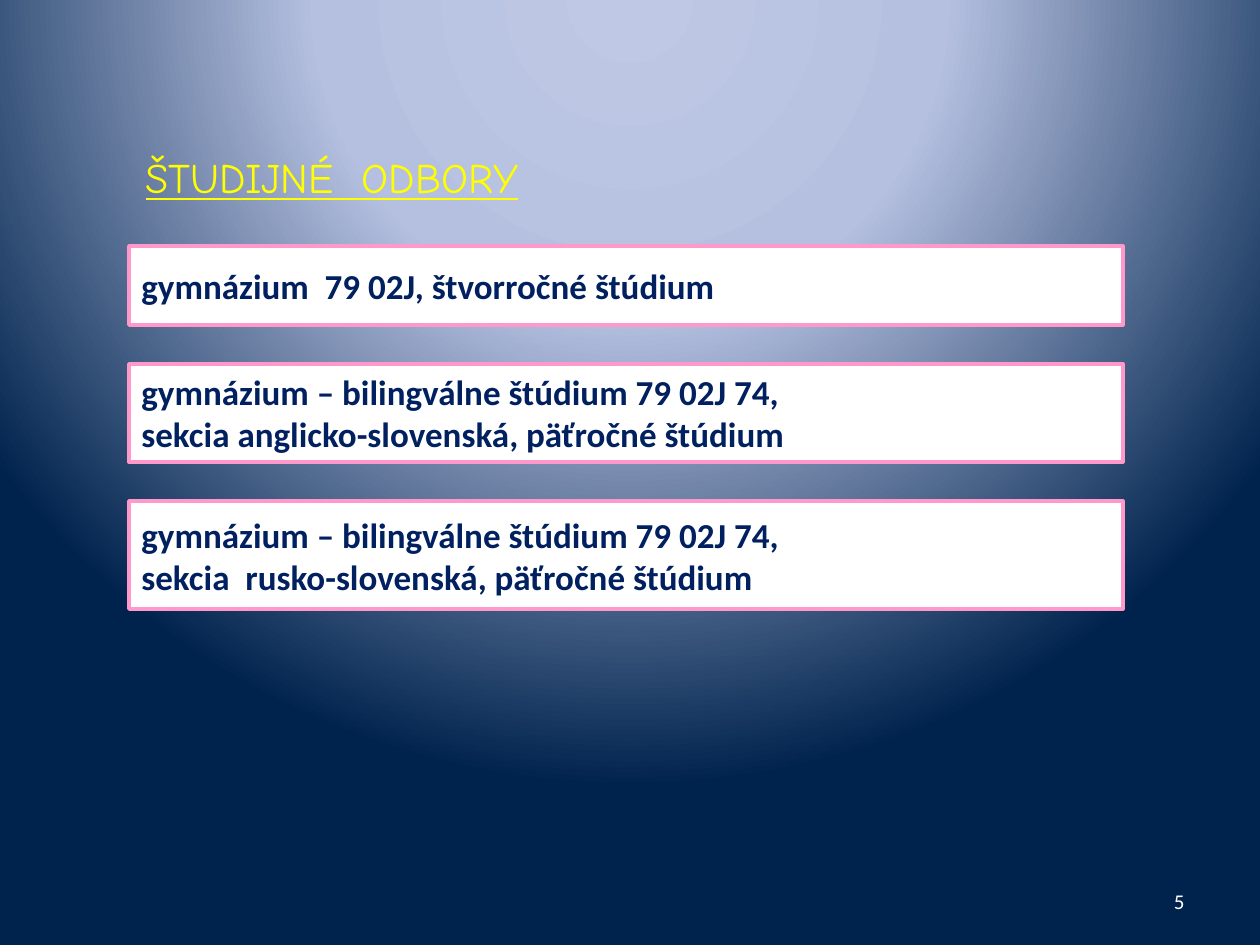
from lxml import etree
from pptx import Presentation
from pptx.dml.color import RGBColor
from pptx.enum.shapes import MSO_SHAPE
from pptx.enum.text import MSO_ANCHOR as Anchor, MSO_AUTO_SIZE as AutoSize, PP_ALIGN as Align
from pptx.oxml import parse_xml
from pptx.oxml.ns import nsdecls, qn
from pptx.util import Pt

WHITE = RGBColor(0xFF, 0xFF, 0xFF)
YELLOW = RGBColor(0xFF, 0xFF, 0x00)
PINK = RGBColor(0xFF, 0x99, 0xCC)
NAVY = RGBColor(0x00, 0x20, 0x60)
BACKGROUND_STOPS = [
    (0, RGBColor(0xBF, 0xC9, 0xE5)),
    (40, RGBColor(0xB5, 0xC0, 0xE0)),
    (100, RGBColor(0x00, 0x23, 0x4D)),
]

TITLE = "ŠTUDIJNÉ  ODBORY"
SLIDE_NUMBER = "5"
# top, height and lines of each study programme
PROGRAMMES = [
    (246, 79, ["gymnázium  79 02J, štvorročné štúdium"]),
    (364, 98, ["gymnázium – bilingválne štúdium 79 02J 74,",
               "sekcia anglicko-slovenská, päťročné štúdium"]),
    (501, 108, ["gymnázium – bilingválne štúdium 79 02J 74,",
                "sekcia  rusko-slovenská, päťročné štúdium"]),
]
PROGRAMME_LEFT, PROGRAMME_WIDTH = 129, 994

EMU_PER_PX = 914400 / 126


def px(*lengths):
    """Convert pixel lengths to a list of EMU."""
    return [round(length * EMU_PER_PX) for length in lengths]


def write_text(shape, lines, size, color, font="Calibri", align=Align.LEFT,
               anchor=Anchor.MIDDLE, bold=False, underline=False):
    frame = shape.text_frame
    frame.word_wrap = True
    frame.auto_size = AutoSize.NONE
    frame.vertical_anchor = anchor
    frame.text = "\n".join(lines)
    for paragraph in frame.paragraphs:
        paragraph.alignment = align
        for run in paragraph.runs:
            run.font.name = font
            run.font.size = Pt(size)
            run.font.bold = bold
            run.font.underline = underline
            run.font.color.rgb = color


def set_radial_background(slide, stops):
    """Fill the background with a circular gradient centred above the slide."""
    background = parse_xml(
        f'<p:bg {nsdecls("p", "a")}><p:bgPr><a:gradFill rotWithShape="1"><a:gsLst/>'
        '<a:path path="circle"><a:fillToRect l="50000" t="-80000" r="50000" b="180000"/></a:path>'
        '</a:gradFill><a:effectLst/></p:bgPr></p:bg>')
    stop_list = background.find(".//" + qn("a:gsLst"))
    for percent, color in stops:
        stop = etree.SubElement(stop_list, qn("a:gs"), pos=str(percent * 1000))
        etree.SubElement(stop, qn("a:srgbClr"), val=str(color))
    slide.element.find(qn("p:cSld")).insert(0, background)


def add_programme(slide, top, height, lines):
    box = slide.shapes.add_shape(
        MSO_SHAPE.RECTANGLE, *px(PROGRAMME_LEFT, top, PROGRAMME_WIDTH, height))
    box.shadow.inherit = False
    box.fill.solid()
    box.fill.fore_color.rgb = WHITE
    box.line.color.rgb = PINK
    box.line.width = Pt(2)
    write_text(box, lines, 20, NAVY, bold=True)


def main():
    presentation = Presentation()
    presentation.slide_width, presentation.slide_height = px(1260, 945)
    slide = presentation.slides.add_slide(presentation.slide_layouts[5])
    set_radial_background(slide, BACKGROUND_STOPS)

    title = slide.shapes.title
    title.left, title.top, title.width, title.height = px(34, 145, 596, 63)
    write_text(title, [TITLE], 24, YELLOW, font="Comic Neue", align=Align.CENTER,
               anchor=Anchor.TOP, underline=True)

    for top, height, lines in PROGRAMMES:
        add_programme(slide, top, height, lines)

    number = slide.shapes.add_textbox(*px(903, 876, 294, 50))
    write_text(number, [SLIDE_NUMBER], 12, WHITE, align=Align.RIGHT)

    presentation.save("out.pptx")


if __name__ == "__main__":
    main()
